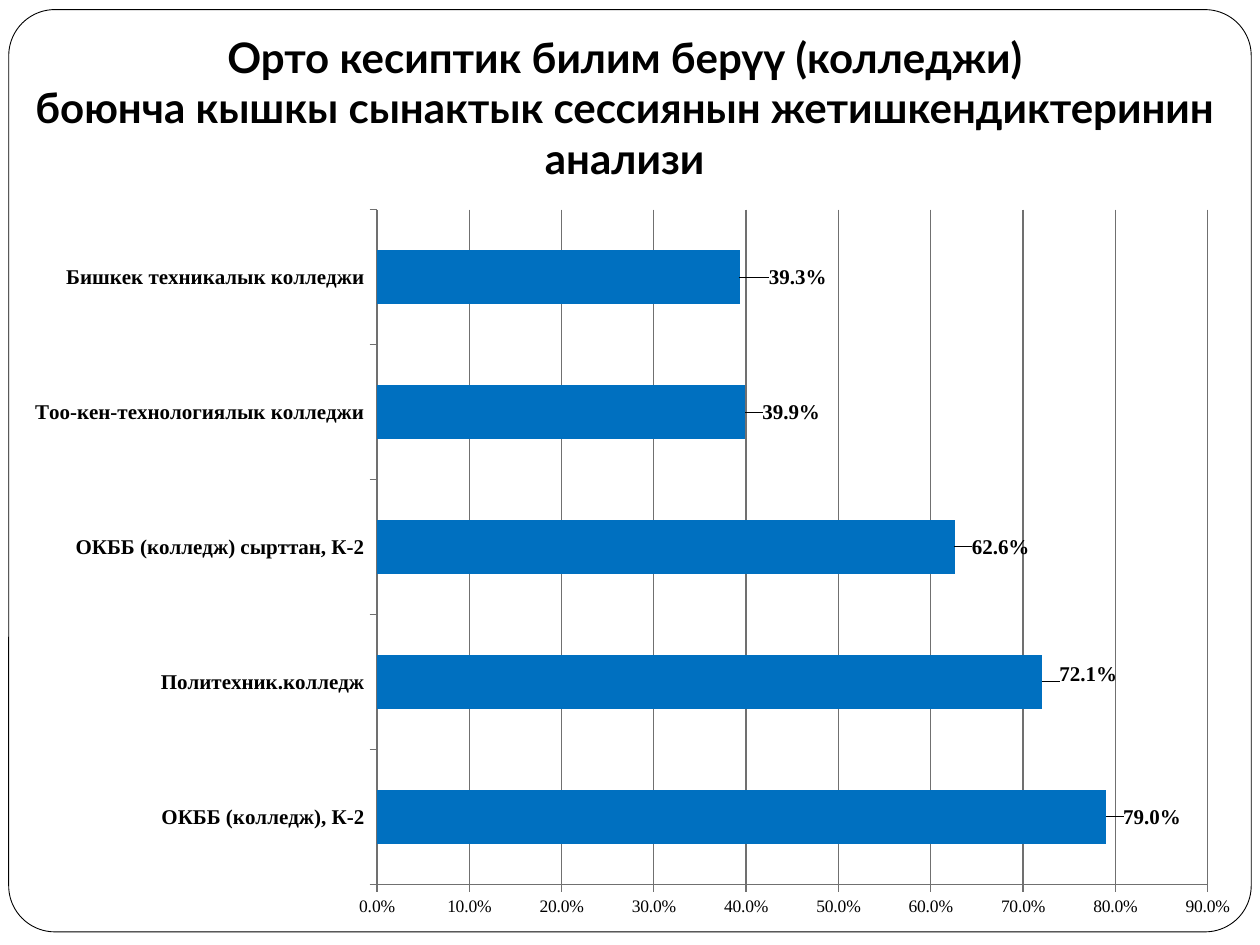
import pptx
import pptx.chart.data
import pptx.dml.color
import pptx.enum.chart
import pptx.enum.shapes
import pptx.enum.text
import pptx.oxml
import pptx.oxml.ns
import pptx.util

Pt = pptx.util.Pt
RGB = pptx.dml.color.RGBColor
qn = pptx.oxml.ns.qn


class Theme:
    paper = RGB(255, 255, 255)
    ink = RGB(0, 0, 0)
    bar = RGB(0x00, 0x70, 0xC0)
    grid = RGB(0x70, 0x70, 0x70)
    title_font = "Lato"
    chart_font = "Times New Roman"
    title_size = Pt(24)
    label_size = Pt(12)
    axis_size = Pt(10)


def style_font(font, name, size, bold):
    font.name = name
    font.size = size
    font.bold = bold
    font.color.rgb = Theme.ink


def make_layout(**values):
    settings = "".join(f'<c:{key} val="{value}"/>' for key, value in values.items())
    namespace = pptx.oxml.ns.nsdecls("c")
    return pptx.oxml.parse_xml(
        f"<c:layout {namespace}><c:manualLayout>{settings}</c:manualLayout></c:layout>"
    )


deck = pptx.Presentation()
deck.slide_width = Pt(720)
deck.slide_height = Pt(540)
page = deck.slides.add_slide(deck.slide_layouts[6])

frame = page.shapes.add_shape(
    pptx.enum.shapes.MSO_SHAPE.ROUNDED_RECTANGLE, Pt(5), Pt(5.5), Pt(710), Pt(527)
)
frame.adjustments[0] = 0.05
frame.shadow.inherit = False
frame.fill.solid()
frame.fill.fore_color.rgb = Theme.paper
frame.line.color.rgb = Theme.ink
frame.line.width = Pt(0.5)

title = page.shapes.add_textbox(Pt(-3), Pt(21.5), Pt(720), Pt(90))
title_text = title.text_frame
title_text.word_wrap = True
title_text.vertical_anchor = pptx.enum.text.MSO_ANCHOR.BOTTOM
title_text.margin_bottom = Pt(7.2)
para = title_text.paragraphs[0]
para.text = (
    "Орто кесиптик билим берүү (колледжи)\v"
    "боюнча кышкы сынактык сессиянын жетишкендиктеринин анализи"
)
para.alignment = pptx.enum.text.PP_ALIGN.CENTER
style_font(para.font, Theme.title_font, Theme.title_size, True)

results = [
    ("ОКББ (колледж), К-2", 0.79, 0.01, 0),
    ("Политехник.колледж", 0.721, 0.01, -0.01),
    ("ОКББ (колледж) сырттан, К-2", 0.626, 0.01, 0),
    ("Тоо-кен-технологиялык колледжи", 0.399, 0.01, 0),
    ("Бишкек техникалык колледжи", 0.393, 0.02, 0),
]
data = pptx.chart.data.CategoryChartData(number_format="0.0%")
data.categories = [name for name, value, right, down in results]
data.add_series("Series 1", [value for name, value, right, down in results])
chart = page.shapes.add_chart(
    pptx.enum.chart.XL_CHART_TYPE.BAR_CLUSTERED,
    Pt(20), Pt(111.5), Pt(698), Pt(419), data,
).chart
chart.has_title = False
chart.has_legend = False
style_font(chart.font, Theme.chart_font, Theme.axis_size, False)

plot = chart.plots[0]
plot.gap_width = 150
plot.vary_by_categories = False
series = plot.series[0]
series.format.fill.solid()
series.format.fill.fore_color.rgb = Theme.bar

value_axis = chart.value_axis
value_axis.minimum_scale = 0
value_axis.maximum_scale = 0.9
value_axis.major_unit = 0.1
value_axis.has_major_gridlines = True
value_axis.tick_labels.number_format = "0.0%"
value_axis.tick_labels.number_format_is_linked = False
category_axis = chart.category_axis
style_font(category_axis.tick_labels.font, Theme.chart_font, Theme.label_size, True)
for axis in (value_axis, category_axis):
    axis.major_tick_mark = pptx.enum.chart.XL_TICK_MARK.OUTSIDE
    axis.format.line.color.rgb = Theme.grid
value_axis.major_gridlines.format.line.color.rgb = Theme.grid

labels = series.data_labels
labels.show_value = True
labels.number_format = "0.0%"
labels.number_format_is_linked = False
labels.position = pptx.enum.chart.XL_LABEL_POSITION.OUTSIDE_END
style_font(labels.font, Theme.chart_font, Theme.label_size, True)
for index in range(len(results)):
    label = series.points[index].data_label
    style_font(label.font, Theme.chart_font, Theme.label_size, True)
    label.position = pptx.enum.chart.XL_LABEL_POSITION.OUTSIDE_END

label_nodes = chart.element.iter(qn("c:dLbl"))
for node, (name, value, right, down) in zip(label_nodes, results):
    node.insert(1, make_layout(x=right, y=down))

plot_area = next(chart.element.iter(qn("c:plotArea")))
for old_layout in plot_area.findall(qn("c:layout")):
    plot_area.remove(old_layout)
plot_area.insert(0, make_layout(
    layoutTarget="inner", xMode="edge", yMode="edge", x=0.28, y=0.02, w=0.68, h=0.92
))

deck.save("out.pptx")
